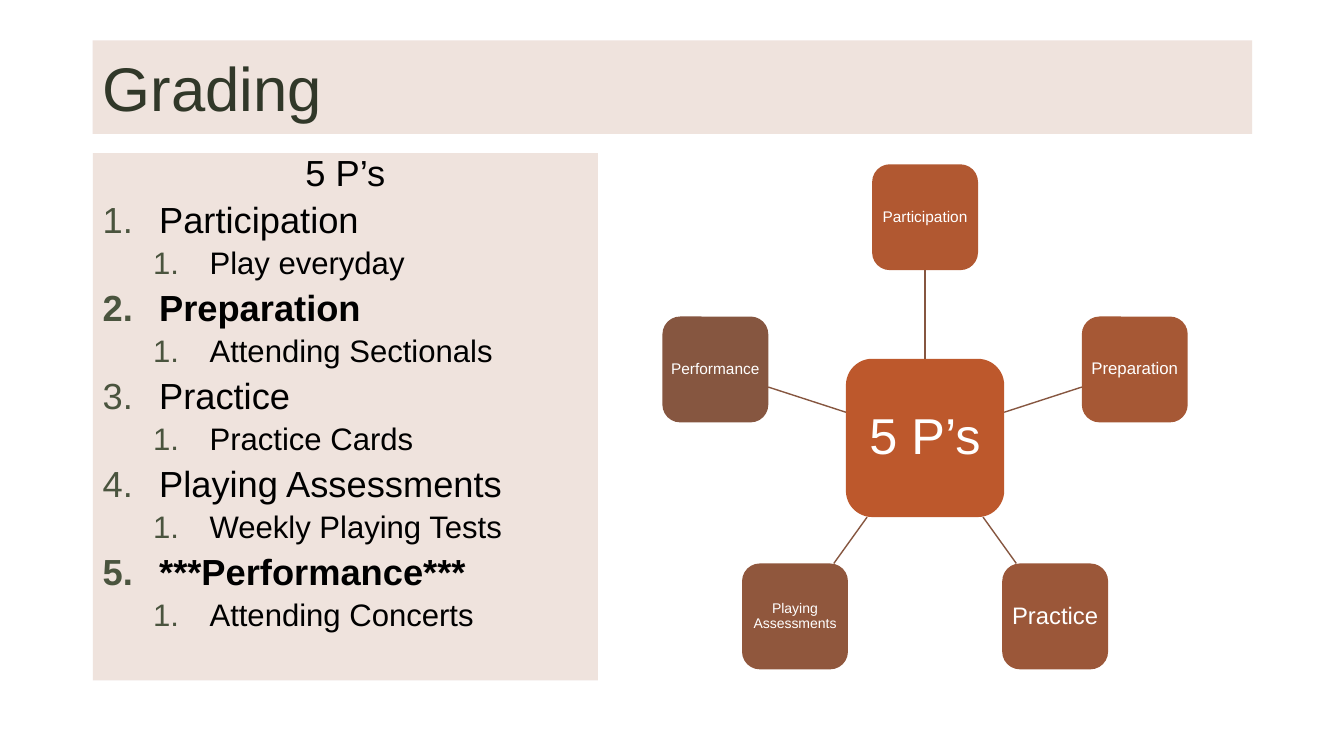
import math
from dataclasses import dataclass

import pptx
import pptx.dml.color
import pptx.enum.shapes
import pptx.enum.text
import pptx.oxml
import pptx.oxml.ns
import pptx.util
from lxml import etree

PX = 9144  # EMU per px, 100 px to the inch
SHAPE = pptx.enum.shapes.MSO_SHAPE
ALIGN = pptx.enum.text.PP_ALIGN
ANCHOR = pptx.enum.text.MSO_ANCHOR
qn = pptx.oxml.ns.qn


@dataclass(frozen=True)
class Theme:
    font: str = "Arial"
    panel: str = "EBDCD5"
    panel_alpha: int = 80
    title: str = "313829"
    body: str = "000000"
    number: str = "4A543E"
    node_text: str = "FFFFFF"
    hub: str = "BD582C"
    spoke: str = "865640"
    title_size: float = 44
    item_size: float = 25.9
    sub_size: float = 22.2
    hub_size: float = 36


def px(value):
    return round(value) * PX


def rgb(value):
    return pptx.dml.color.RGBColor.from_string(value)


def add_text(p, text, *, font, size, color, bold=False, align=ALIGN.LEFT,
             spacing=1.0, before=0):
    p.alignment = align
    p.line_spacing = spacing
    p.space_before = pptx.util.Pt(before)
    r = p.add_run()
    r.text = text
    r.font.name = font
    r.font.size = pptx.util.Pt(size)
    r.font.bold = bold
    r.font.color.rgb = rgb(color)


class Deck:
    def __init__(self, theme):
        self.theme = theme
        self.prs = pptx.Presentation()
        self.prs.slide_width = px(1333)
        self.prs.slide_height = px(750)
        self.s = self.prs.slides.add_slide(self.prs.slide_layouts[6])

    def box(self, kind, x, y, w, h, fill, anchor=ANCHOR.MIDDLE):
        sp = self.s.shapes.add_shape(kind, px(x), px(y), px(w), px(h))
        sp.shadow.inherit = False
        sp.fill.solid()
        sp.fill.fore_color.rgb = rgb(fill)
        sp.line.fill.background()
        sp.text_frame.word_wrap = True
        sp.text_frame.vertical_anchor = anchor
        return sp

    def panel(self, x, y, w, h, anchor=ANCHOR.MIDDLE):
        sp = self.box(SHAPE.RECTANGLE, x, y, w, h, self.theme.panel, anchor)
        color = sp.fill._xPr.find(qn("a:solidFill"))[0]
        alpha = etree.SubElement(color, qn("a:alpha"))
        alpha.set("val", str(self.theme.panel_alpha * 1000))
        return sp.text_frame

    def node(self, text, cx, cy, side, fill, size, inset):
        sp = self.box(SHAPE.ROUNDED_RECTANGLE, cx - side / 2, cy - side / 2,
                      side, side, fill)
        tf = sp.text_frame
        tf.margin_left = tf.margin_right = px(inset)
        tf.margin_top = tf.margin_bottom = px(inset)
        add_text(tf.paragraphs[0], text, font=self.theme.font, size=size,
                 color=self.theme.node_text, align=ALIGN.CENTER, spacing=0.9)
        return sp

    def line(self, x1, y1, x2, y2):
        c = self.s.shapes.add_connector(
            pptx.enum.shapes.MSO_CONNECTOR.STRAIGHT,
            px(x1), px(y1), px(x2), px(y2))
        c.line.color.rgb = rgb(self.theme.spoke)
        c.line.width = pptx.util.Pt(1)
        etree.SubElement(c._element.spPr, qn("a:effectLst"))
        return c

    def numbered(self, tf, text, level, bold=False):
        p = tf.add_paragraph()
        p.level = level
        pPr = p._p.get_or_add_pPr()
        pPr.set("marL", str(px(56 + 50 * level)))
        pPr.set("indent", str(px(-56)))
        color = etree.SubElement(pPr, qn("a:buClr"))
        etree.SubElement(color, qn("a:srgbClr")).set("val", self.theme.number)
        etree.SubElement(pPr, qn("a:buFont")).set("typeface", self.theme.font)
        etree.SubElement(pPr, qn("a:buAutoNum")).set("type", "arabicPeriod")
        size = self.theme.sub_size if level else self.theme.item_size
        add_text(p, text, font=self.theme.font, size=size, bold=bold,
                 color=self.theme.body, spacing=0.8, before=round(size * 0.345, 1))


def main():
    theme = Theme()
    deck = Deck(theme)

    # Title
    tf = deck.panel(92, 40, 1150, 93)
    add_text(tf.paragraphs[0], "Grading", font=theme.font,
             size=theme.title_size, color=theme.title)

    # Numbered list
    tf = deck.panel(92, 152, 501, 523, ANCHOR.TOP)
    add_text(tf.paragraphs[0], "5 P’s", font=theme.font, size=theme.item_size,
             color=theme.body, align=ALIGN.CENTER, spacing=0.8)
    for item, detail, bold in [
        ("Participation", "Play everyday", False),
        ("Preparation", "Attending Sectionals", True),
        ("Practice", "Practice Cards", False),
        ("Playing Assessments", "Weekly Playing Tests", False),
        ("***Performance***", "Attending Concerts", True),
    ]:
        deck.numbered(tf, item, 0, bold)
        deck.numbered(tf, detail, 1)

    # Radial diagram: satellites clockwise from the top of the hub
    cx, cy, radius, hub_side, side = 917.5, 434.5, 219, 157, 105
    hub = deck.node("5 P’s", cx, cy, hub_side, theme.hub, theme.hub_size, 10)
    satellites = [
        ("Participation", "B15831", 11),
        ("Preparation", "A65835", 12),
        ("Practice", "9B5739", 17),
        ("Playing Assessments", "90573D", 10),
        ("Performance", "865640", 11),
    ]
    for i, (text, fill, size) in enumerate(satellites):
        angle = math.radians(360 / len(satellites) * i - 90)
        dx, dy = math.cos(angle), math.sin(angle)
        node = deck.node(text, cx + radius * dx, cy + radius * dy, side,
                         fill, size, 2)
        # Spokes run between the square edges along the radius
        reach = max(abs(dx), abs(dy))
        start = hub_side / 2 / reach
        end = radius - side / 2 / reach
        spoke = deck.line(cx + start * dx, cy + start * dy,
                          cx + end * dx, cy + end * dy)
        if i == 0:
            spoke.begin_connect(hub, 0)
            spoke.end_connect(node, 2)

    deck.prs.save("out.pptx")


if __name__ == "__main__":
    main()
